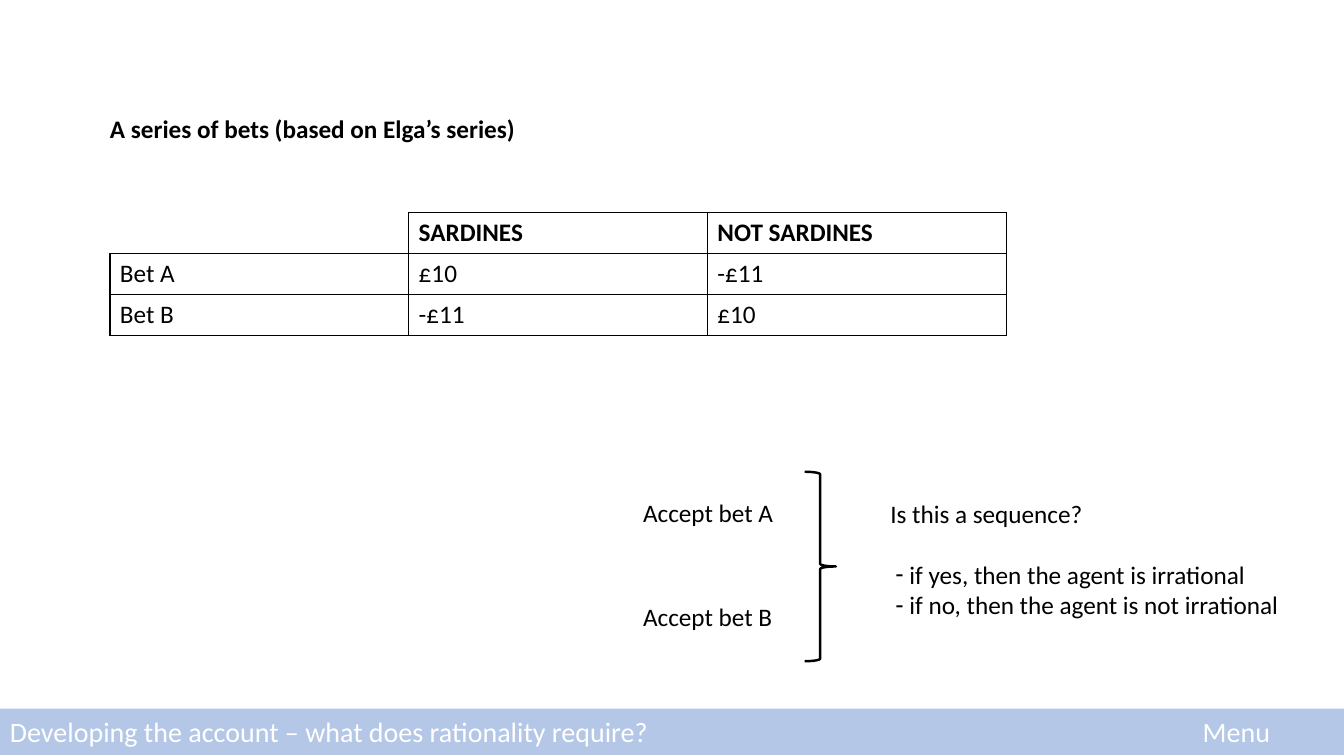
from lxml import etree
from pptx import Presentation
from pptx.dml.color import RGBColor
from pptx.enum.shapes import MSO_SHAPE
from pptx.enum.text import MSO_ANCHOR, MSO_AUTO_SIZE, PP_ALIGN
from pptx.oxml.ns import qn
from pptx.util import Inches, Pt

RECTANGLE = MSO_SHAPE.RECTANGLE
RIGHT_BRACE = MSO_SHAPE.RIGHT_BRACE
TOP = MSO_ANCHOR.TOP
LEFT = PP_ALIGN.LEFT
NO_AUTOFIT = MSO_AUTO_SIZE.NONE

TITLE_AND_CONTENT = 1
BLACK, WHITE, PALE_BLUE = "000000", "FFFFFF", "B4C7E7"
PAYOFFS = [
    ["", "SARDINES", "NOT SARDINES"],
    ["Bet A", "£10", "-£11"],
    ["Bet B", "-£11", "£10"],
]


def rgb(value):
    return RGBColor.from_string(value)


def style(paragraph, size=18, color=BLACK, bold=False):
    paragraph.alignment = LEFT
    paragraph.line_spacing = 1.0
    paragraph.space_before = Pt(0)
    font = paragraph.font
    font.name, font.size, font.bold = "Calibri", Pt(size), bold
    font.color.rgb = rgb(color)


def place(shape, left, top, width, height):
    shape.left, shape.top = Inches(left), Inches(top)
    shape.width, shape.height = Inches(width), Inches(height)
    frame = shape.text_frame
    frame.word_wrap = True
    frame.auto_size = NO_AUTOFIT
    frame.vertical_anchor = TOP


def add_label(slide, text, left, top, width, height=0.4, **look):
    label = slide.shapes.add_textbox(0, 0, 0, 0)
    place(label, left, top, width, height)
    label.text_frame.text = text
    style(label.text_frame.paragraphs[0], **look)


def add_heading(slide, left, top, width, height):
    heading = slide.shapes.title
    place(heading, left, top, width, height)
    heading.text_frame.text = "A series of bets (based on Elga’s series)"
    style(heading.text_frame.paragraphs[0], bold=True)


def set_borders(cell, hidden):
    """Draw the four cell borders, leaving out the sides in hidden."""
    properties = cell._tc.get_or_add_tcPr()
    for side in "LRTB":
        border = etree.SubElement(properties, qn(f"a:ln{side}"), w=str(Pt(1)))
        if side in hidden:
            etree.SubElement(border, qn("a:noFill"))
        else:
            fill = etree.SubElement(border, qn("a:solidFill"))
            etree.SubElement(fill, qn("a:srgbClr"), val=BLACK)


def add_payoff_table(slide, left, top, width, height):
    table = slide.shapes.add_table(
        len(PAYOFFS), len(PAYOFFS[0]),
        Inches(left), Inches(top), Inches(width), Inches(height)).table
    table.first_row = table.horz_banding = False
    for r, payoffs in enumerate(PAYOFFS):
        for c, payoff in enumerate(payoffs):
            cell = table.cell(r, c)
            cell.text = payoff
            style(cell.text_frame.paragraphs[0], bold=r == 0)
            set_borders(cell, hidden="" if payoff else "LT")
            cell.fill.background()


def set_bullet(paragraph, char=None, margin=0, hanging=0):
    properties = paragraph._p.get_or_add_pPr()
    properties.set("marL", str(Inches(margin)))
    properties.set("indent", str(-Inches(hanging)))
    if char:
        etree.SubElement(properties, qn("a:buChar"), char=char)
    else:
        etree.SubElement(properties, qn("a:buNone"))
    # The schema wants the bullet ahead of the default run properties.
    properties.append(properties.find(qn("a:defRPr")))


def add_question(slide, left, top, width, height):
    question = slide.placeholders[1]
    place(question, left, top, width, height)
    frame = question.text_frame
    frame.text = ("Is this a sequence?\n"
                  "if yes, then the agent is irrational\n"
                  "if no, then the agent is not irrational")
    for paragraph in frame.paragraphs:
        style(paragraph)
    ask, *answers = frame.paragraphs
    set_bullet(ask)
    for answer in answers:
        set_bullet(answer, "-", margin=0.19, hanging=0.14)
    answers[0].space_before = Pt(22)


def add_bet_choices(slide, left, top, width, height):
    """Place the two bets, the brace joining them and the question it leads to."""
    for bet, offset in (("A", 0.2), ("B", 1.24)):
        add_label(slide, f"Accept bet {bet}", left, top + offset, 1.7)
    brace = slide.shapes.add_shape(
        RIGHT_BRACE, Inches(left + 1.7), Inches(top), Inches(0.31), Inches(height))
    brace.shadow.inherit = False
    brace.fill.background()
    brace.line.color.rgb = rgb(BLACK)
    brace.line.width = Pt(1.75)
    add_question(slide, left + 2.45, top + 0.21, width - 2.45, 1.31)


def add_footer(slide, left, top, width, height):
    bar = slide.shapes.add_shape(
        RECTANGLE, Inches(left), Inches(top), Inches(width), Inches(height))
    bar.shadow.inherit = False
    bar.fill.solid()
    bar.fill.fore_color.rgb = rgb(PALE_BLUE)
    bar.line.fill.background()
    look = {"height": 0.44, "size": 20, "color": WHITE}
    add_label(slide, "Developing the account – what does rationality require?",
              left, top + 0.01, 9.36, **look)
    add_label(slide, "Menu", left + 11.83, top + 0.01, 1.5, **look)


def main():
    presentation = Presentation()
    presentation.slide_width = Inches(13.33)
    presentation.slide_height = Inches(7.5)
    slide = presentation.slides.add_slide(
        presentation.slide_layouts[TITLE_AND_CONTENT])
    add_heading(slide, 0.99, 1.07, 11.09, 0.4)
    add_payoff_table(slide, 1.09, 2.11, 8.89, 1.22)
    add_bet_choices(slide, 6.28, 4.68, 6.68, 1.88)
    add_footer(slide, 0, 7.03, 13.33, 0.46)
    presentation.save("out.pptx")


if __name__ == "__main__":
    main()
